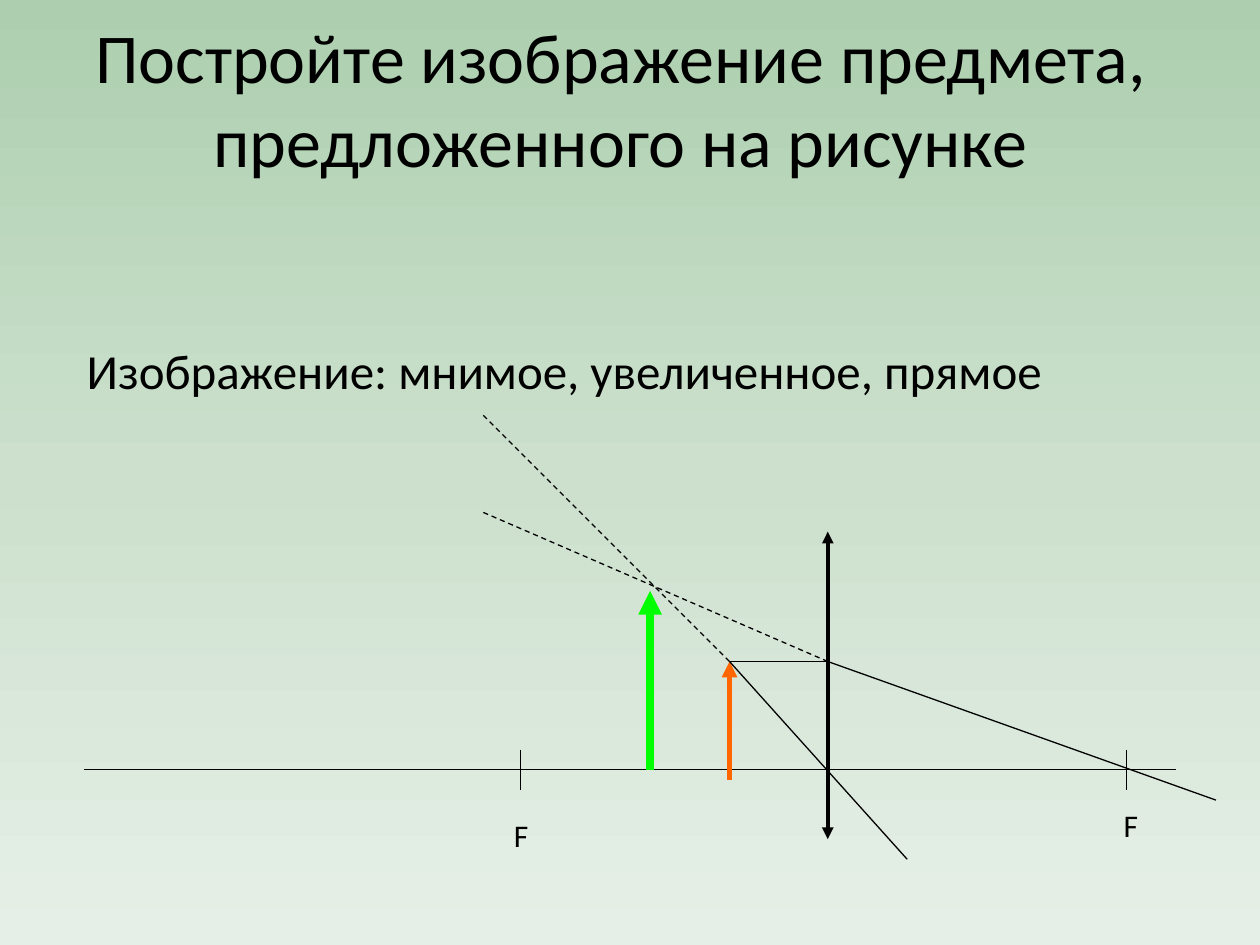
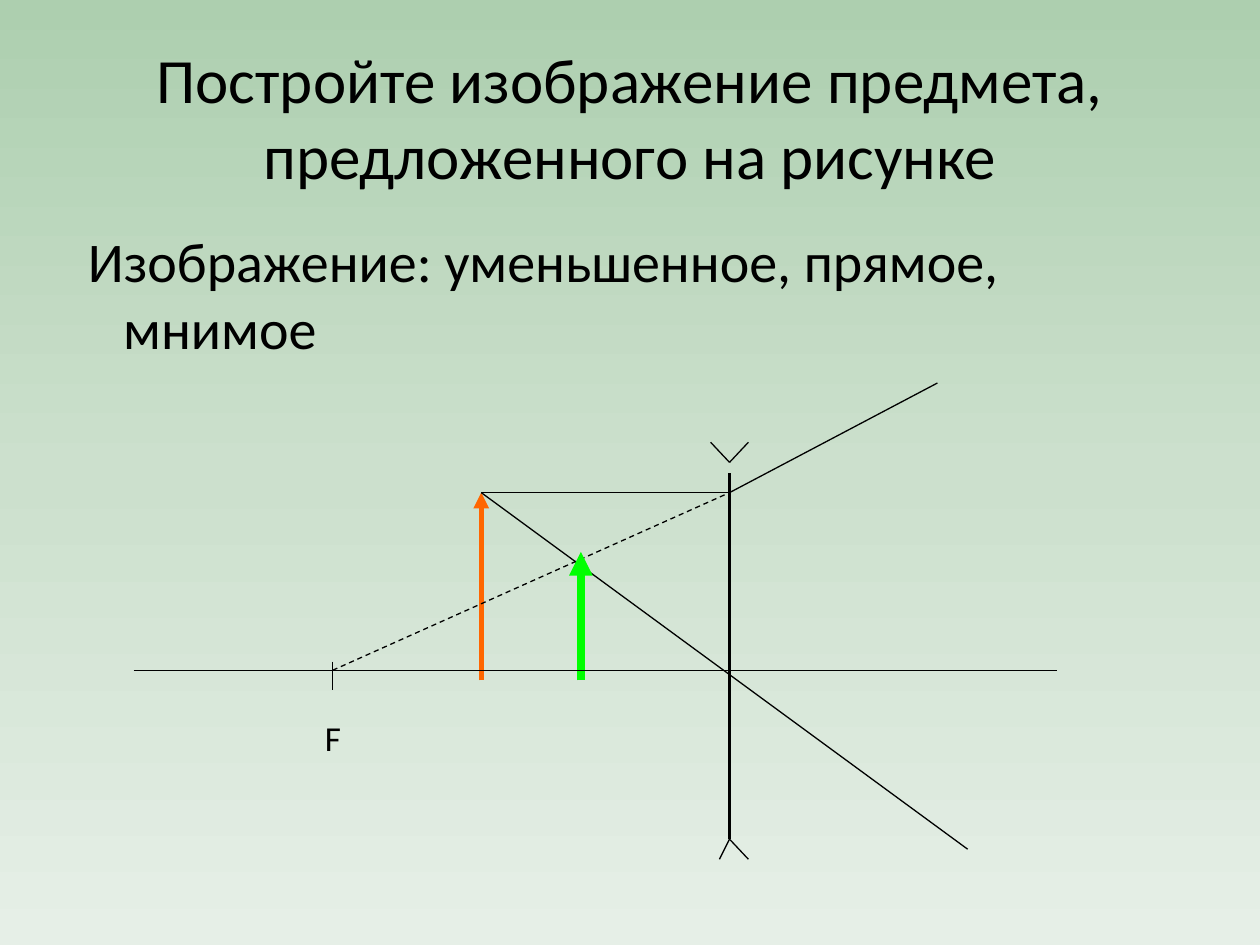
import copy

import lxml.etree
import pptx
import pptx.dml.color
import pptx.enum.dml
import pptx.enum.shapes
import pptx.enum.text
import pptx.oxml.ns
import pptx.util

Inches = pptx.util.Inches
RGBColor = pptx.dml.color.RGBColor
Align = pptx.enum.text.PP_ALIGN
Anchor = pptx.enum.text.MSO_ANCHOR
qn = pptx.oxml.ns.qn

BLACK = RGBColor(0x00, 0x00, 0x00)
ORANGE = RGBColor(0xFF, 0x66, 0x00)
GREEN = RGBColor(0x00, 0xFF, 0x00)
BACKGROUND = [
    RGBColor(0xAD, 0xCF, 0xAF),
    RGBColor(0xCC, 0xE0, 0xCD),
    RGBColor(0xE6, 0xEF, 0xE7),
]
FONT = "Calibri"
TITLE = "Постройте изображение предмета, предложенного на рисунке"
HANGING = 0.38
THIN, LENS, OBJECT, IMAGE = 0.75, 2.25, 3, 4.5


def set_background(master):
    fill = master.background.fill
    fill.gradient()
    fill.gradient_angle = 270
    stop_list = master._element.find(".//" + qn("p:bg")).find(".//" + qn("a:gsLst"))
    stop_list.insert(1, copy.deepcopy(stop_list[0]))
    for index, (stop, color) in enumerate(zip(fill.gradient_stops, BACKGROUND)):
        stop.position = index / (len(BACKGROUND) - 1)
        stop.color.rgb = color


def write(shape, text, size, align=Align.LEFT, anchor=Anchor.TOP):
    frame = shape.text_frame
    frame.text = text
    frame.word_wrap = True
    frame.auto_size = pptx.enum.text.MSO_AUTO_SIZE.NONE
    frame.vertical_anchor = anchor
    paragraph = frame.paragraphs[0]
    paragraph.alignment = align
    paragraph.font.name = FONT
    paragraph.font.size = pptx.util.Pt(size)
    paragraph.font.color.rgb = BLACK
    return paragraph


def add_title_slide(presentation, box, size):
    slide = presentation.slides.add_slide(presentation.slide_layouts[5])
    title = slide.shapes.title
    title.left, title.top, title.width, title.height = map(Inches, box)
    write(title, TITLE, size, Align.CENTER, Anchor.MIDDLE)
    return slide


def add_answer(slide, box, text, size, first_line=0):
    shape = slide.shapes.add_textbox(*map(Inches, box))
    properties = write(shape, text, size)._p.get_or_add_pPr()
    properties.set("marL", str(Inches(HANGING)))
    properties.set("indent", str(Inches(first_line - HANGING)))


class LensDiagram:
    def __init__(self, slide, center):
        self.shapes = slide.shapes
        self.center_x, self.center_y = center

    def line(self, start, end, color=BLACK, width=THIN, dashed=False, arrows=()):
        points = [
            Inches(offset + origin)
            for point in (start, end)
            for offset, origin in zip(point, (self.center_x, self.center_y))
        ]
        connector = self.shapes.add_connector(
            pptx.enum.shapes.MSO_CONNECTOR.STRAIGHT, *points
        )
        connector.line.color.rgb = color
        connector.line.width = pptx.util.Pt(width)
        if dashed:
            connector.line.dash_style = pptx.enum.dml.MSO_LINE.DASH
        properties = connector._element.spPr
        outline = properties.find(qn("a:ln"))
        for arrow in arrows:
            lxml.etree.SubElement(outline, qn("a:" + arrow)).set("type", "triangle")
        lxml.etree.SubElement(properties, qn("a:effectLst"))

    def axis(self, left, right):
        self.line((left, 0), (right, 0))

    def lens(self, bottom, top, arrows=()):
        self.line((0, bottom), (0, top), width=LENS, arrows=arrows)

    def upright_arrow(self, x, bottom, top, color, width):
        self.line((x, bottom), (x, top), color, width, arrows=["tailEnd"])

    def rays(self, segments, dashed=False):
        for start, end in segments:
            self.line(start, end, dashed=dashed)

    def focus(self, x, tick, label_box, size, align=Align.LEFT):
        self.line((x, tick[0]), (x, tick[1]))
        left, top, width, height = label_box
        label = self.shapes.add_textbox(
            Inches(self.center_x + x + left),
            Inches(self.center_y + top),
            Inches(width),
            Inches(height),
        )
        write(label, "F", size, align)


def draw_converging_lens(slide, center):
    diagram = LensDiagram(slide, center)
    object_tip = (-0.78, -0.86)
    lens_hit = (0, -0.86)
    diagram.axis(-5.9, 2.76)
    diagram.lens(0.55, -1.89, ["headEnd", "tailEnd"])
    tick = (-0.16, 0.16)
    diagram.focus(-2.44, tick, (-0.15, 0.32, 0.47, 0.4), 18)
    diagram.upright_arrow(object_tip[0], 0.08, object_tip[1], ORANGE, OBJECT)
    diagram.focus(2.37, tick, (-0.4, 0.24, 0.87, 0.4), 18, Align.CENTER)
    diagram.rays([
        (object_tip, lens_hit),
        (lens_hit, (3.08, 0.24)),
        (object_tip, (0.63, 0.71)),
    ])
    diagram.rays([(object_tip, (-2.75, -2.83)), (lens_hit, (-2.75, -2.05))], dashed=True)
    diagram.upright_arrow(-1.41, 0, -1.42, GREEN, IMAGE)


def draw_diverging_lens(slide, center):
    diagram = LensDiagram(slide, center)
    object_tip = (-1.97, -1.41)
    lens_hit = (0, -1.41)
    focus_x = -3.15
    top_mark, bottom_mark = (0, -1.65), (0, 1.34)
    diagram.lens(bottom_mark[1], -1.57)
    diagram.rays([
        (top_mark, (0.15, -1.81)),
        (top_mark, (-0.15, -1.81)),
        (bottom_mark, (-0.08, 1.5)),
        (bottom_mark, (0.15, 1.5)),
    ])
    diagram.focus(focus_x, (-0.07, 0.16), (-0.16, 0.32, 0.55, 0.43), 20)
    diagram.upright_arrow(object_tip[0], 0.08, object_tip[1], ORANGE, OBJECT)
    diagram.rays([(object_tip, lens_hit)])
    diagram.rays([((focus_x, 0), lens_hit)], dashed=True)
    diagram.rays([(lens_hit, (1.65, -2.28)), (object_tip, (1.89, 1.42))])
    diagram.upright_arrow(-1.18, 0.08, -0.94, GREEN, IMAGE)
    diagram.axis(-4.73, 2.6)


def main():
    presentation = pptx.Presentation()
    presentation.slide_width = Inches(10)
    presentation.slide_height = Inches(7.5)
    set_background(presentation.slide_master)

    slide = add_title_slide(presentation, (0.35, 0, 9.15, 1.55), 40)
    add_answer(slide, (0.59, 2.65, 9, 4.37), "Изображение: мнимое, увеличенное, прямое", 28)
    draw_converging_lens(slide, (6.57, 6.11))

    slide = add_title_slide(presentation, (0.5, 0.3, 9, 1.25), 36)
    add_answer(
        slide,
        (0.5, 1.75, 9, 4.95),
        "Изображение: уменьшенное, прямое, мнимое",
        32,
        first_line=0.1,
    )
    draw_diverging_lens(slide, (5.79, 5.32))

    presentation.save("out.pptx")


if __name__ == "__main__":
    main()
